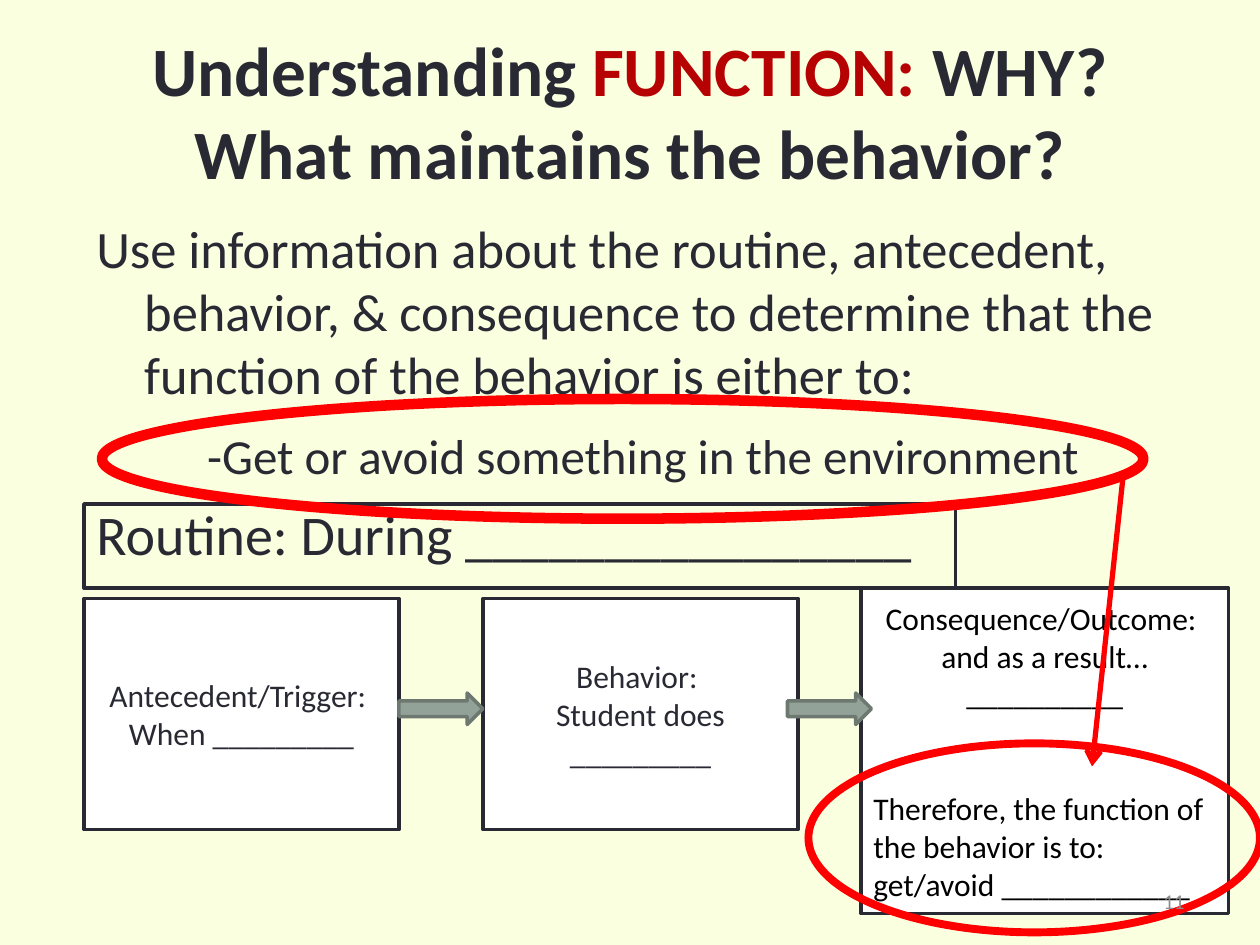
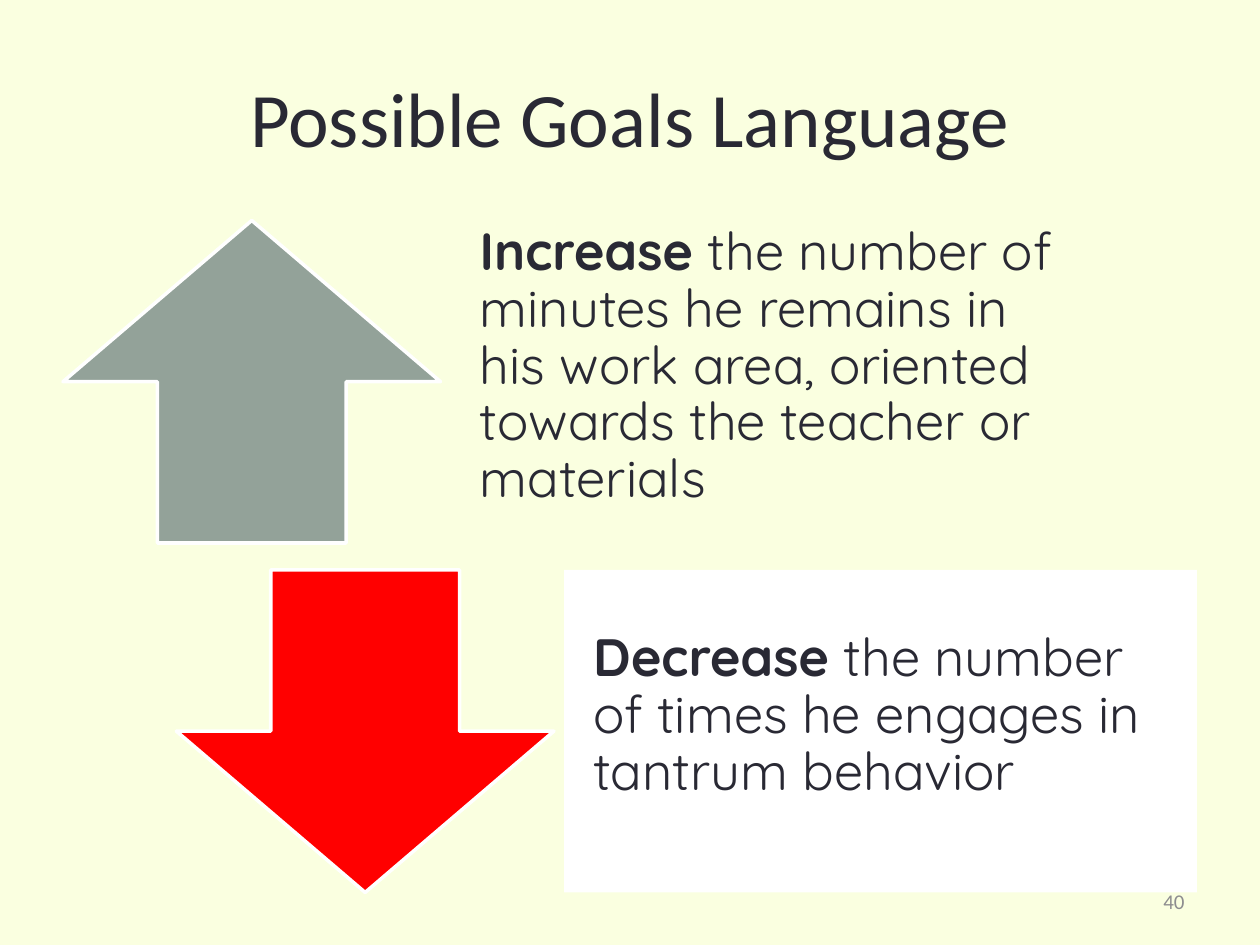
from dataclasses import dataclass

from lxml.etree import SubElement
from pptx import Presentation
from pptx.dml.color import RGBColor
from pptx.enum.shapes import MSO_CONNECTOR as Connector, MSO_SHAPE as Shape
from pptx.enum.text import MSO_ANCHOR as Anchor, PP_ALIGN as Align
from pptx.oxml.ns import qn
from pptx.util import Inches, Pt

COLUMNS, ROWS = 120, 90
CELL = Inches(10) // COLUMNS


@dataclass(frozen=True)
class Theme:
    page: str = "FAFFE0"
    ink: str = "292934"
    black: str = "000000"
    white: str = "FFFFFF"
    accent: str = "B60202"
    alert: str = "FF0000"
    sage: str = "93A299"
    sage_edge: str = "6D7871"
    muted: str = "8D8D8F"
    font: str = "Calibri"
    goal_font: str = "Quicksand"
    long_title: float = 39.6
    title: float = 44
    routine: float = 32
    body: float = 30
    answer: float = 28
    label: float = 18
    footer: float = 12
    edge: float = 2


THEME = Theme()


@dataclass(frozen=True)
class Box:
    """An area in grid cells."""
    left: float
    top: float
    width: float
    height: float

    def inner(self, column, row, width, height):
        return Box(self.left + column, self.top + row, width, height)

    def share(self, x, y, width, height):
        return self.inner(x * self.width, y * self.height,
                          width * self.width, height * self.height)

    def emu(self):
        return [round(v * CELL) for v in (self.left, self.top, self.width, self.height)]


PAGE = Box(0, 0, COLUMNS, ROWS)


def rgb(code):
    return RGBColor.from_string(code)


def add_run(paragraph, text, size, color=THEME.ink, bold=False, font=THEME.font):
    run = paragraph.add_run()
    run.text = text
    run.font.name, run.font.size, run.font.bold = font, Pt(size), bold
    run.font.color.rgb = rgb(color)


def next_paragraph(frame, align=Align.LEFT):
    first = frame.paragraphs[0]
    paragraph = frame.add_paragraph() if first.runs else first
    paragraph.alignment = align
    return paragraph


def add_text(slide, box, anchor=Anchor.MIDDLE):
    frame = slide.shapes.add_textbox(*box.emu()).text_frame
    frame.word_wrap, frame.vertical_anchor = True, anchor
    return frame


def add_figure(slide, kind, box, fill=None, line=None, width=THEME.edge):
    figure = slide.shapes.add_shape(kind, *box.emu())
    figure.shadow.inherit = False
    if fill:
        figure.fill.solid()
        figure.fill.fore_color.rgb = rgb(fill)
    else:
        figure.fill.background()
    if line:
        figure.line.color.rgb = rgb(line)
        figure.line.width = Pt(width)
    else:
        figure.line.fill.background()
    return figure


def add_pointer(slide, box):
    """Red arrow from the top right to the bottom left of the box."""
    left, top, width, height = box.emu()
    pointer = slide.shapes.add_connector(
        Connector.STRAIGHT, left + width, top, left, top + height)
    pointer.line.color.rgb = rgb(THEME.alert)
    pointer.line.width = Pt(3)
    SubElement(pointer.line._get_or_add_ln(), qn("a:tailEnd"), type="arrow")
    SubElement(pointer._element.spPr, qn("a:effectLst"))


# Shared frame of every slide
def add_page(deck, number, title_top, title_runs, title_size):
    slide = deck.slides.add_slide(deck.slide_layouts[6])
    slide.background.fill.solid()
    slide.background.fill.fore_color.rgb = rgb(THEME.page)
    title = next_paragraph(add_text(slide, PAGE.inner(6, title_top, 108, 15)), Align.CENTER)
    for text, color, bold in title_runs:
        add_run(title, text, title_size, color, bold)
    return slide


def add_page_number(slide, number):
    footer = add_text(slide, PAGE.inner(86, 83.4, 28, 4.8))
    add_run(next_paragraph(footer, Align.RIGHT), number, THEME.footer, THEME.muted)


# Explanation above the behavior chain
def add_explanation(slide, box):
    frame = add_text(slide, box, Anchor.TOP)
    lines = [  # text, size, left margin, first-line indent, space before
        ("Use information about the routine, antecedent, behavior, & consequence "
         "to determine that the function of the behavior is either to:",
         THEME.body, 0.38, -0.38, 7),
        ("-Get or avoid something in the environment", THEME.answer, 0.88, 0, 11.5),
        ("Routine: During ________________", THEME.routine, 0.38, -0.38, 8.5),
    ]
    for text, size, margin, indent, before in lines:
        paragraph = next_paragraph(frame)
        paragraph.space_before = Pt(before)
        properties = paragraph._p.get_or_add_pPr()
        properties.set("marL", str(Inches(margin)))
        properties.set("indent", str(Inches(indent)))
        add_run(paragraph, text, size)


# Antecedent, behavior and consequence boxes with arrows between them
def add_behavior_chain(slide, box):
    steps = [
        (box.inner(0, 1, 30, 22), ("Antecedent/Trigger: ", "When _________")),
        (box.inner(38, 1, 30, 22), ("Behavior: ", "Student does _________")),
        (box.inner(74, 0, 35, 31), ("Consequence/Outcome: ", "and as a result… __________")),
    ]
    for place, lines in steps:
        step = add_figure(slide, Shape.RECTANGLE, place, THEME.white, THEME.ink)
        frame = step.text_frame
        frame.word_wrap, frame.vertical_anchor = True, Anchor.MIDDLE
        is_outcome = place is steps[-1][0]
        color = THEME.black if is_outcome else THEME.ink
        for line in lines:
            add_run(next_paragraph(frame, Align.CENTER), line, THEME.label, color)
        if is_outcome:
            conclusion = next_paragraph(frame)
            conclusion.space_before = Pt(44)
            add_run(conclusion, "Therefore, the function of the behavior is to: "
                    "get/avoid ____________", THEME.label, color)
    for column in (30, 67):
        add_figure(slide, Shape.RIGHT_ARROW, box.inner(column, 10, 8, 3),
                   THEME.sage, THEME.sage_edge)


# Red marks that tie the answer to the outcome
def add_highlights(slide, box):
    add_figure(slide, Shape.OVAL, box.inner(9.7, 38, 99.2, 11.4), line=THEME.alert, width=6)
    add_pointer(slide, box.inner(104, 45, 3, 28))
    add_figure(slide, Shape.OVAL, box.inner(77, 70.8, 43, 18), line=THEME.alert, width=4.5)


def build_function_slide(deck):
    slide = add_page(deck, "11", 3, [
        ("Understanding ", THEME.ink, True),
        ("FUNCTION: ", THEME.accent, True),
        ("WHY? What maintains the behavior?", THEME.ink, True),
    ], THEME.long_title)
    add_explanation(slide, PAGE.inner(8, 20, 109, 68))
    add_behavior_chain(slide, PAGE.inner(8, 56, 109, 31))
    add_figure(slide, Shape.RECTANGLE, PAGE.inner(8, 48, 83, 8), line=THEME.ink)
    add_highlights(slide, PAGE)
    add_page_number(slide, "11")


# One goal: a large arrow with its wording at the right
def add_goal(slide, box, arrow, color, verb, rest, panel=None):
    add_figure(slide, arrow, box.share(0, 0, 0.37, 1), color, THEME.white)
    wording = box.share(0.38, 0, 0.62, 1)
    if panel:
        add_figure(slide, Shape.RECTANGLE, wording, panel)
    frame = add_text(slide, wording)
    frame.margin_left = frame.margin_right = frame.margin_bottom = Inches(0.23)
    frame.margin_top = 0
    goal = next_paragraph(frame)
    goal.line_spacing = 0.9
    add_run(goal, verb, THEME.body, bold=True, font=THEME.goal_font)
    add_run(goal, rest, THEME.body, font=THEME.goal_font)


def build_goals_slide(deck):
    slide = add_page(deck, "40", 3.6, [("Possible Goals Language", THEME.ink, False)],
                     THEME.title)
    goals = PAGE.inner(6, 21, 108, 64)
    add_goal(slide, goals.share(0, 0, 0.9, 0.48), Shape.UP_ARROW, THEME.sage, "Increase",
             " the number of minutes he remains in his work area, "
             "oriented towards the teacher or materials")
    add_goal(slide, goals.share(0.1, 0.52, 0.9, 0.48), Shape.DOWN_ARROW, THEME.alert,
             "Decrease", " the number of times he engages in tantrum behavior", THEME.white)
    add_page_number(slide, "40")


def main():
    deck = Presentation()
    deck.slide_width, deck.slide_height = COLUMNS * CELL, ROWS * CELL
    build_function_slide(deck)
    build_goals_slide(deck)
    deck.save("out.pptx")


if __name__ == "__main__":
    main()
